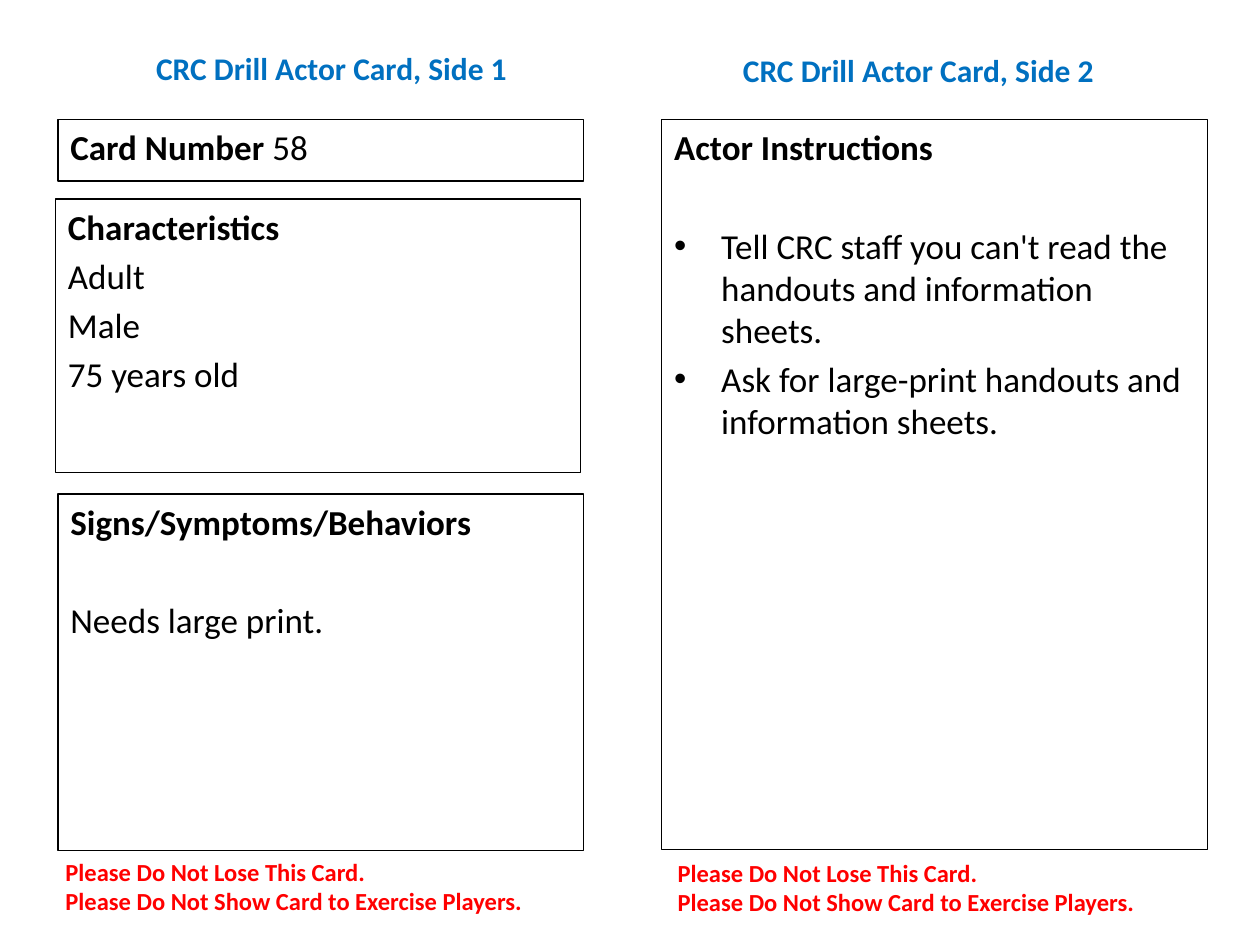
import pptx
import pptx.dml.color
import pptx.enum.shapes
import pptx.enum.text
import pptx.util
from lxml import etree

Cm = pptx.util.Cm
Pt = pptx.util.Pt
ALIGN = pptx.enum.text.PP_ALIGN
ANCHOR = pptx.enum.text.MSO_ANCHOR
COLOURS = {"title": "0070C0", "ink": "000000", "warning": "FF0000"}
FONT = "Calibri"
PARAGRAPH_GAP = 4
SECTION_GAP = 32.4
TITLE_HEIGHT = 1.98
NOTICE = ["Please Do Not Lose This Card.",
          "Please Do Not Show Card to Exercise Players."]


def colour(name):
    return pptx.dml.color.RGBColor.from_string(COLOURS[name])


def add_bullet(paragraph):
    properties = paragraph._p.get_or_add_pPr()
    properties.set("marL", str(Cm(0.95)))
    properties.set("indent", str(-Cm(0.95)))
    namespace = pptx.oxml.ns.nsuri("a")
    etree.SubElement(properties, f"{{{namespace}}}buFont", typeface="Arial")
    etree.SubElement(properties, f"{{{namespace}}}buChar", char="•")


def write(paragraph, text, *, size=20, ink="ink", bold=False,
          align=ALIGN.LEFT, before=0, bullet=False):
    paragraph.alignment = align
    paragraph.space_before = Pt(before)
    if bullet:
        add_bullet(paragraph)
    run = paragraph.add_run()
    run.text = text
    run.font.name = FONT
    run.font.size = Pt(size)
    run.font.bold = bold
    run.font.color.rgb = colour(ink)


def text_area(slide, left, top, width, height, anchor=ANCHOR.TOP):
    area = slide.shapes.add_textbox(Cm(left), Cm(top), Cm(width), Cm(height))
    area.text_frame.word_wrap = True
    area.text_frame.vertical_anchor = anchor
    return area.text_frame


def title(slide, left, top, width, text):
    frame = text_area(slide, left, top, width, TITLE_HEIGHT, ANCHOR.MIDDLE)
    write(frame.paragraphs[0], text, size=18, ink="title", bold=True,
          align=ALIGN.CENTER)


def notice(slide, left, top):
    frame = text_area(slide, left, top, 10.69, 1.45)
    for index, line in enumerate(NOTICE):
        paragraph = frame.add_paragraph() if index else frame.paragraphs[0]
        write(paragraph, line, size=14, ink="warning", bold=True)


def panel(slide, left, top, width, height, heading, lines=(),
          first_gap=PARAGRAPH_GAP, bullet=False):
    box = slide.shapes.add_shape(pptx.enum.shapes.MSO_SHAPE.RECTANGLE,
                                 Cm(left), Cm(top), Cm(width), Cm(height))
    box.shadow.inherit = False
    box.fill.background()
    box.line.color.rgb = colour("ink")
    box.line.width = Pt(0.75)
    frame = box.text_frame
    frame.word_wrap = True
    frame.vertical_anchor = ANCHOR.TOP
    write(frame.paragraphs[0], heading, bold=True)
    for index, line in enumerate(lines):
        write(frame.add_paragraph(), line, bullet=bullet,
              before=PARAGRAPH_GAP if index else first_gap)
    return frame


def side_one(slide, left, top, width):
    title(slide, left, top, width, "CRC Drill Actor Card, Side 1")
    number = panel(slide, left + 0.1, top + 2.03, 10.59, 1.24, "Card Number ")
    write(number.paragraphs[0], "58")
    panel(slide, left + 0.05, top + 3.63, 10.59, 5.51, "Characteristics",
          ["Adult", "Male", "75 years old"])
    panel(slide, left + 0.1, top + 9.58, 10.59, 7.19,
          "Signs/Symptoms/Behaviors", ["Needs large print."], SECTION_GAP)
    notice(slide, left, top + 16.77)


def side_two(slide, left, top, width):
    title(slide, left, top, width, "CRC Drill Actor Card, Side 2")
    panel(slide, left + 0.44, top + TITLE_HEIGHT, 11, 14.71,
          "Actor Instructions",
          ["Tell CRC staff you can't read the handouts and information sheets.",
           "Ask for large-print handouts and information sheets."],
          SECTION_GAP, bullet=True)
    notice(slide, left + 0.51, top + 16.74)


def main():
    deck = pptx.Presentation()
    deck.slide_width = Cm(25.4)
    deck.slide_height = Cm(19.05)
    slide = deck.slides.add_slide(deck.slide_layouts[6])
    side_one(slide, 1.07, 0.38, 11.23)
    side_two(slide, 12.9, 0.43, 11.23)
    deck.save("out.pptx")


if __name__ == "__main__":
    main()
